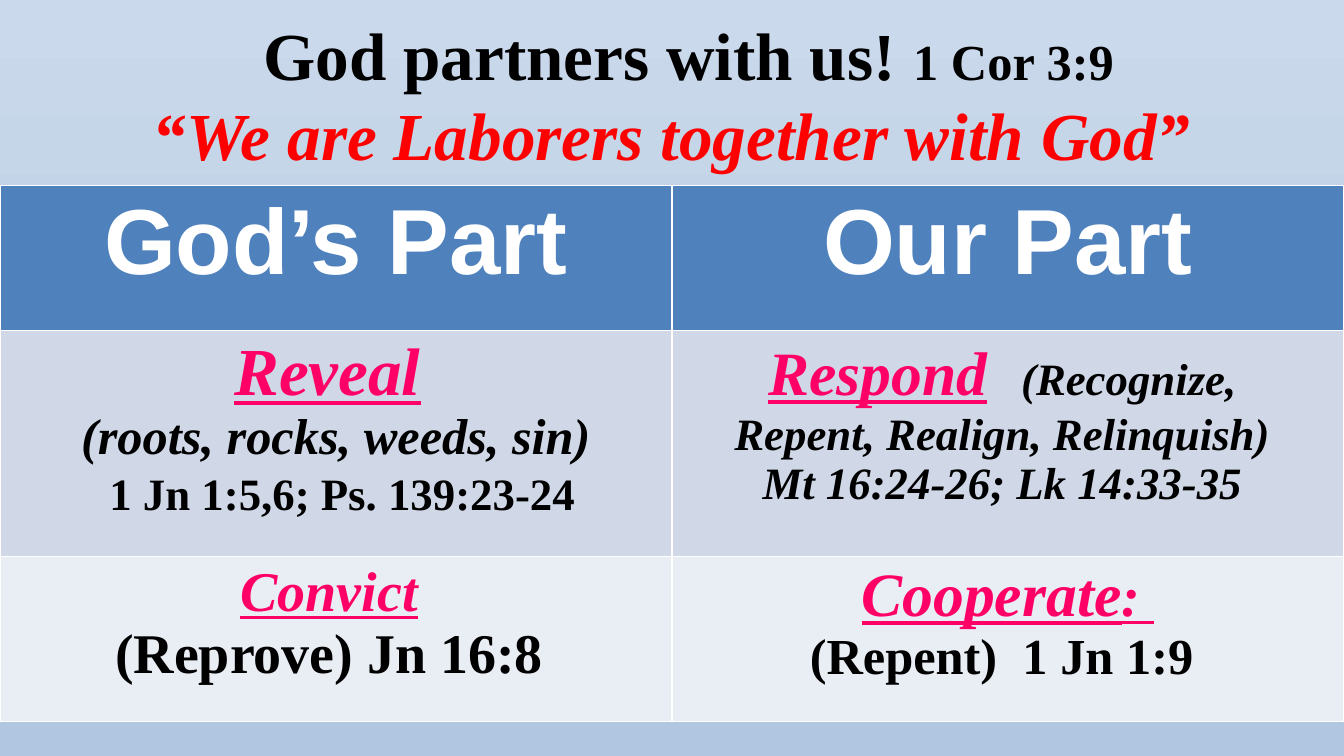
import pptx
import pptx.dml.color
import pptx.enum.text
import pptx.util

RGBColor = pptx.dml.color.RGBColor
Inches = pptx.util.Inches
BLACK = RGBColor(0x00, 0x00, 0x00)
WHITE = RGBColor(0xFF, 0xFF, 0xFF)
RED = RGBColor(0xFF, 0x00, 0x00)
PINK = RGBColor(0xFF, 0x00, 0x66)
HEADER_BLUE = RGBColor(0x4F, 0x81, 0xBD)
BAND_DARK = RGBColor(0xD0, 0xD8, 0xE8)
BAND_LIGHT = RGBColor(0xE9, 0xED, 0xF4)
SKY_TOP = RGBColor(0xCA, 0xD9, 0xEB)
SKY_BOTTOM = RGBColor(0xB0, 0xC6, 0xE1)

WIDTH = 13.33
ROW_HEIGHTS = (1.44, 2.24, 1.64)
ROW_FILLS = (HEADER_BLUE, BAND_DARK, BAND_LIGHT)


class SlideBuilder:
    heading_font = "Arial"
    body_font = "Times New Roman"

    def __init__(self, presentation):
        self.slide = presentation.slides.add_slide(presentation.slide_layouts[6])

    def background(self, top, bottom):
        fill = self.slide.background.fill
        fill.gradient()
        fill.gradient_angle = 270
        for stop, color in zip(fill.gradient_stops, (top, bottom)):
            stop.color.rgb = color

    def fill_text(self, text_frame, lines, font_name):
        text_frame.text = "\n".join("" for line in lines)
        for paragraph, line in zip(text_frame.paragraphs, lines):
            paragraph.alignment = pptx.enum.text.PP_ALIGN.CENTER
            for text, size, color, style, *spacing in line:
                run = paragraph.add_run()
                run.text = text
                run.font.name = font_name
                run.font.size = pptx.util.Pt(size)
                run.font.color.rgb = color
                run.font.bold = True
                run.font.italic = "i" in style
                run.font.underline = "u" in style
                for points in spacing:
                    run.font._element.set("spc", str(points * 100))

    def title(self, left, top, width, height, lines):
        box = self.slide.shapes.add_textbox(
            Inches(left), Inches(top), Inches(width), Inches(height))
        text_frame = box.text_frame
        text_frame.word_wrap = True
        text_frame.auto_size = pptx.enum.text.MSO_AUTO_SIZE.SHAPE_TO_FIT_TEXT
        self.fill_text(text_frame, lines, self.body_font)
        first_line = text_frame.paragraphs[0]._p.get_or_add_pPr()
        first_line.set("marL", str(Inches(0.33)))
        first_line.set("indent", "0")

    def table(self, left, top, width, row_heights, row_fills, rows):
        columns = len(rows[0])
        table = self.slide.shapes.add_table(
            len(rows), columns, Inches(left), Inches(top),
            Inches(width), Inches(sum(row_heights))).table
        for column in table.columns:
            column.width = Inches(width / columns)
        for index, (row, height) in enumerate(zip(table.rows, row_heights)):
            row.height = Inches(height)
            font_name = self.body_font if index else self.heading_font
            for cell, lines in zip(row.cells, rows[index]):
                cell.fill.solid()
                cell.fill.fore_color.rgb = row_fills[index]
                self.fill_text(cell.text_frame, lines, font_name)


TITLE = [
    [("God partners with us! ", 48, BLACK, ""), ("1 Cor 3:9", 36, BLACK, "")],
    [("“We are Laborers together with God”", 48, RED, "i")],
]

PARTS = [
    [
        [[("God’s Part", 66, WHITE, "")]],
        [[("Our Part", 66, WHITE, "")]],
    ],
    [
        [
            [("Reveal", 48, PINK, "iu"), (" ", 48, BLACK, "", 24)],
            [("(roots, rocks, weeds, sin)", 36, BLACK, "i")],
            [(" ", 36, BLACK, ""), ("1 Jn 1:5,6; Ps. 139:23-24", 32, BLACK, "")],
        ],
        [
            [("Respond", 44, PINK, "iu"), (" ", 48, BLACK, "", 12),
             ("(Recognize, ", 32, BLACK, "i")],
            [("Repent, Realign, Relinquish) ", 32, BLACK, "i")],
            [("Mt 16:24-26; Lk 14:33-35 ", 32, BLACK, "i")],
        ],
    ],
    [
        [
            [("Convict", 40, PINK, "iu"), (" ", 40, RED, "i")],
            [("(Reprove) Jn 16:8 ", 40, BLACK, "")],
        ],
        [
            [("Cooperate", 44, PINK, "iu"), (": ", 40, PINK, "iu")],
            [("(Repent)  1 Jn 1:9 ", 36, BLACK, "")],
        ],
    ],
]


def main():
    presentation = pptx.Presentation()
    presentation.slide_width = Inches(WIDTH)
    presentation.slide_height = Inches(7.5)
    builder = SlideBuilder(presentation)
    builder.background(SKY_TOP, SKY_BOTTOM)
    builder.table(0, 1.84, WIDTH, ROW_HEIGHTS, ROW_FILLS, PARTS)
    builder.title(0.25, 0.08, 12.83, 1.72, TITLE)
    presentation.save("out.pptx")


if __name__ == "__main__":
    main()
